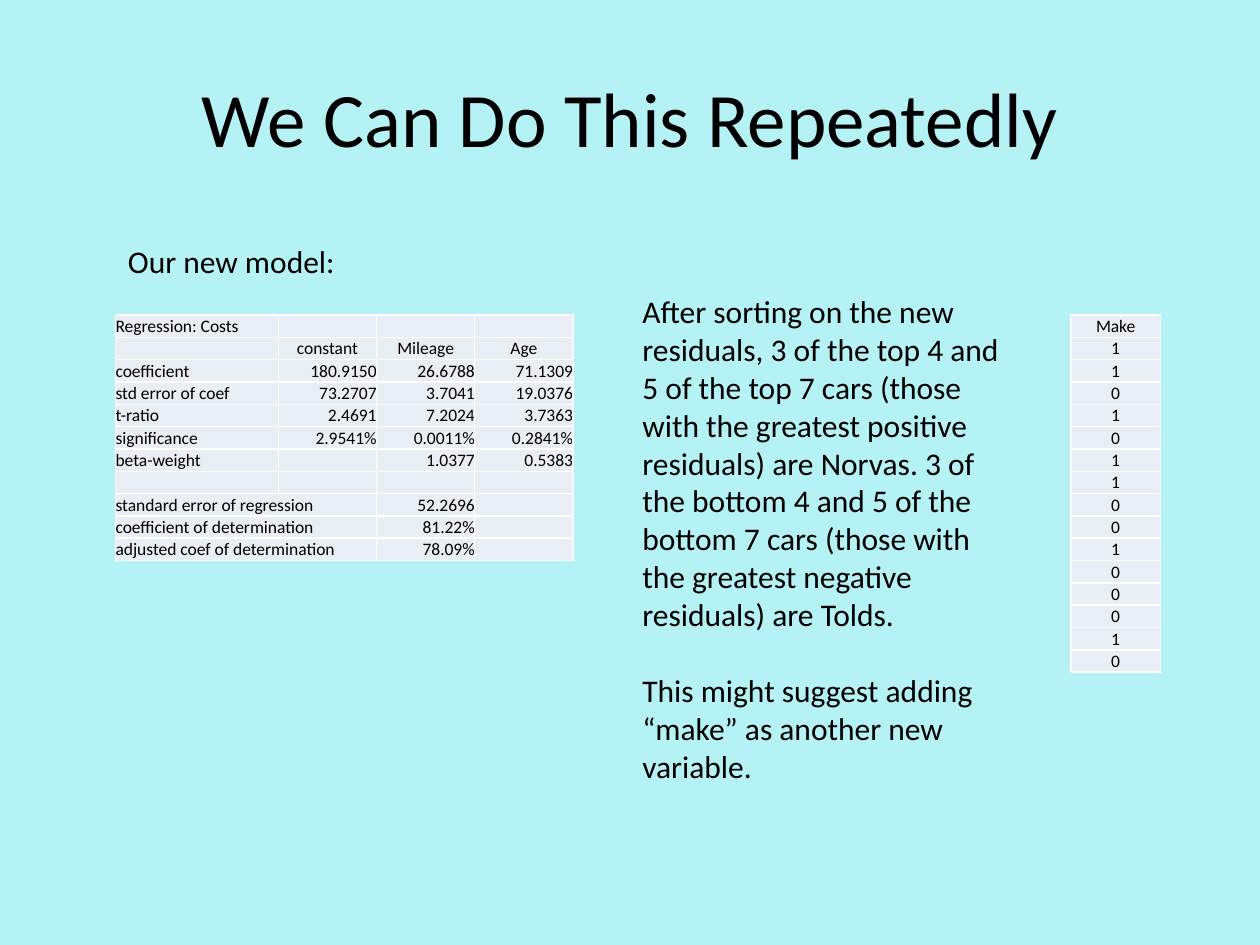
import pptx
import pptx.util
import pptx.dml.color
import pptx.enum.text
import pptx.oxml.ns
import lxml.etree

Cm = pptx.util.Cm
Pt = pptx.util.Pt
RGBColor = pptx.dml.color.RGBColor
Align = pptx.enum.text.PP_ALIGN
Anchor = pptx.enum.text.MSO_ANCHOR
qn = pptx.oxml.ns.qn

AQUA = RGBColor(0xB5, 0xF2, 0xF5)
BLACK = RGBColor(0, 0, 0)
WHITE = RGBColor(0xFF, 0xFF, 0xFF)
PALE = RGBColor(0xE9, 0xED, 0xF4)

COSTS = [
    ["Regression: Costs", "", "", ""],
    ["", "constant", "Mileage", "Age"],
    ["coefficient", "180.9150", "26.6788", "71.1309"],
    ["std error of coef", "73.2707", "3.7041", "19.0376"],
    ["t-ratio", "2.4691", "7.2024", "3.7363"],
    ["significance", "2.9541%", "0.0011%", "0.2841%"],
    ["beta-weight", "", "1.0377", "0.5383"],
    ["", "", "", ""],
    ["standard error of regression", None, "52.2696", ""],
    ["coefficient of determination", None, "81.22%", ""],
    ["adjusted coef of determination", None, "78.09%", ""],
]
MAKES = [[mark] for mark in ["Make", *"110101100100010"]]
NOTES = [
    "After sorting on the new residuals, 3 of the top 4 and 5 of the top 7 cars "
    "(those with the greatest positive residuals) are Norvas. 3 of the bottom 4 "
    "and 5 of the bottom 7 cars (those with the greatest negative residuals) are Tolds.",
    "This might suggest adding “make” as another new variable.",
]


def cost_align(row, col):
    if col == 0:
        return Align.LEFT
    return Align.CENTER if row == 1 else Align.RIGHT


def make_align(row, col):
    return Align.CENTER


class Deck:
    font = "Calibri"
    body = 18
    small = 10
    row = Cm(0.45)

    def __init__(self):
        self.show = pptx.Presentation()
        self.show.slide_width = Cm(25.4)
        self.show.slide_height = Cm(19.05)
        self.slide = self.show.slides.add_slide(self.show.slide_layouts[5])
        back = self.slide.background.fill
        back.solid()
        back.fore_color.rgb = AQUA

    def add_run(self, para, text, size, align):
        para.alignment = align
        run = para.add_run()
        run.text = text
        run.font.name = self.font
        run.font.size = Pt(size)
        run.font.color.rgb = BLACK

    def title(self, text, left, top, width, height):
        box = self.slide.shapes.title
        box.left, box.top, box.width, box.height = left, top, width, height
        box.text_frame.vertical_anchor = Anchor.MIDDLE
        self.add_run(box.text_frame.paragraphs[0], text, 44, Align.CENTER)

    def text(self, lines, left, top, width, height):
        frame = self.slide.shapes.add_textbox(left, top, width, height).text_frame
        frame.word_wrap = True
        for i, line in enumerate(lines):
            para = frame.add_paragraph() if i else frame.paragraphs[0]
            if i:
                para.space_before = Pt(22)
            self.add_run(para, line, self.body, Align.LEFT)

    def border(self, cell):
        props = cell._tc.get_or_add_tcPr()
        for side in ("a:lnL", "a:lnR", "a:lnT", "a:lnB"):
            line = lxml.etree.SubElement(props, qn(side), w=str(Pt(1)))
            fill = lxml.etree.SubElement(line, qn("a:solidFill"))
            lxml.etree.SubElement(fill, qn("a:srgbClr"), val=str(WHITE))

    def cell(self, cell, text, align):
        cell.margin_left = cell.margin_right = 0
        cell.margin_top = cell.margin_bottom = 0
        cell.vertical_anchor = Anchor.BOTTOM
        self.border(cell)
        cell.fill.solid()
        cell.fill.fore_color.rgb = PALE
        para = cell.text_frame.paragraphs[0]
        if text:
            self.add_run(para, text, self.small, align)
        else:
            lxml.etree.SubElement(
                para._p, qn("a:endParaRPr"), sz=str(self.small * 100))

    def table(self, rows, left, top, widths, align):
        grid = self.slide.shapes.add_table(
            len(rows), len(widths), left, top, sum(widths), self.row * len(rows)).table
        grid.first_row = grid.horz_banding = False
        for col, width in zip(grid.columns, widths):
            col.width = width
        for r, texts in enumerate(rows):
            grid.rows[r].height = self.row
            for c, text in enumerate(texts):
                self.cell(grid.cell(r, c), text, align(r, c))
                if text is None:
                    grid.cell(r, c - 1).merge(grid.cell(r, c))


def main():
    deck = Deck()
    deck.title("We Can Do This Repeatedly", Cm(1.27), Cm(0.76), Cm(22.86), Cm(3.18))
    deck.table(MAKES, Cm(21.59), Cm(6.35), [Cm(1.8)], make_align)
    deck.table(COSTS, Cm(2.33), Cm(6.35), [Cm(3.28)] + [Cm(1.98)] * 3, cost_align)
    deck.text(["Our new model:"], Cm(2.33), Cm(4.75), Cm(9.95), Cm(1.03))
    deck.text(NOTES, Cm(12.7), Cm(5.77), Cm(8.05), Cm(11.02))
    deck.show.save("out.pptx")


if __name__ == "__main__":
    main()
